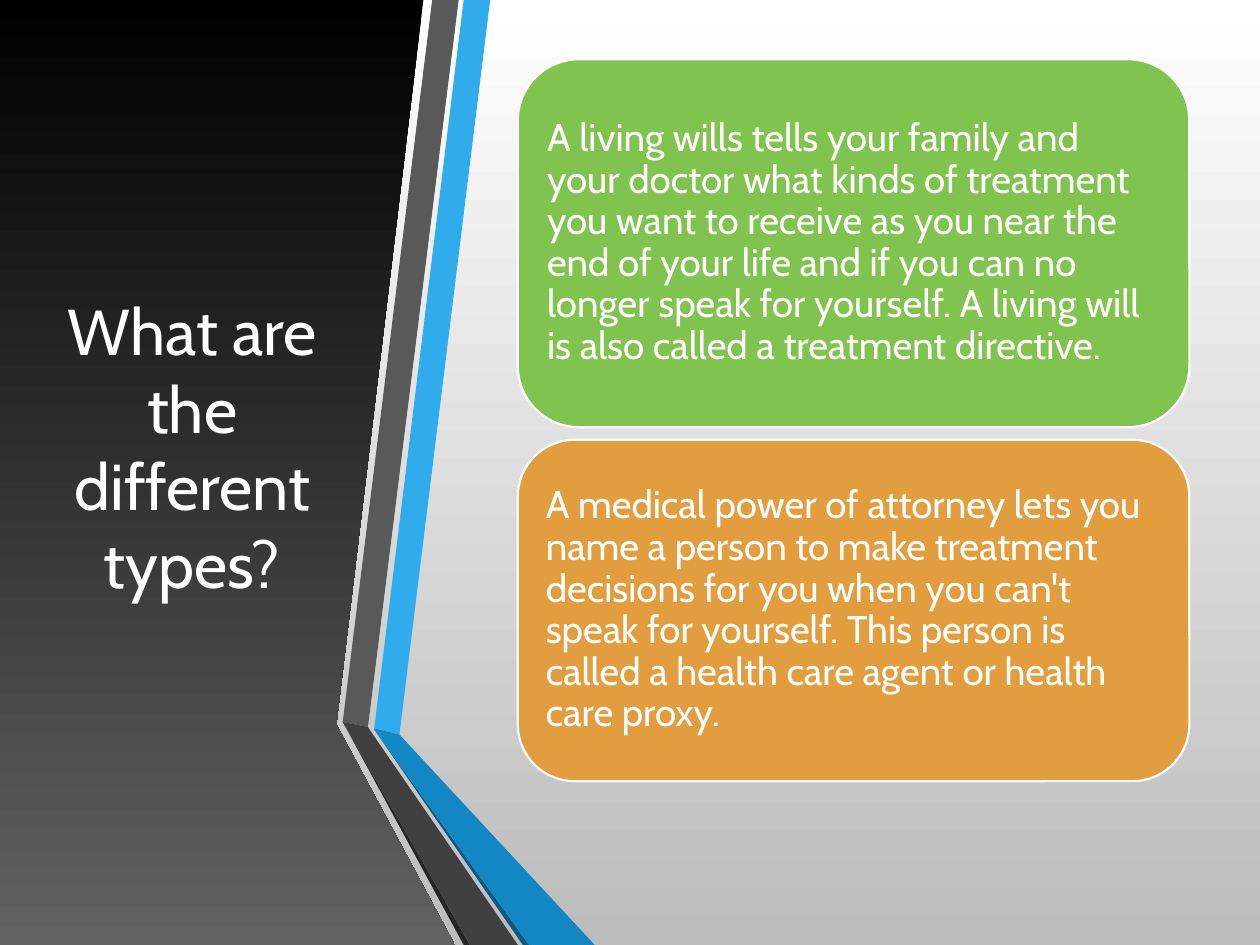
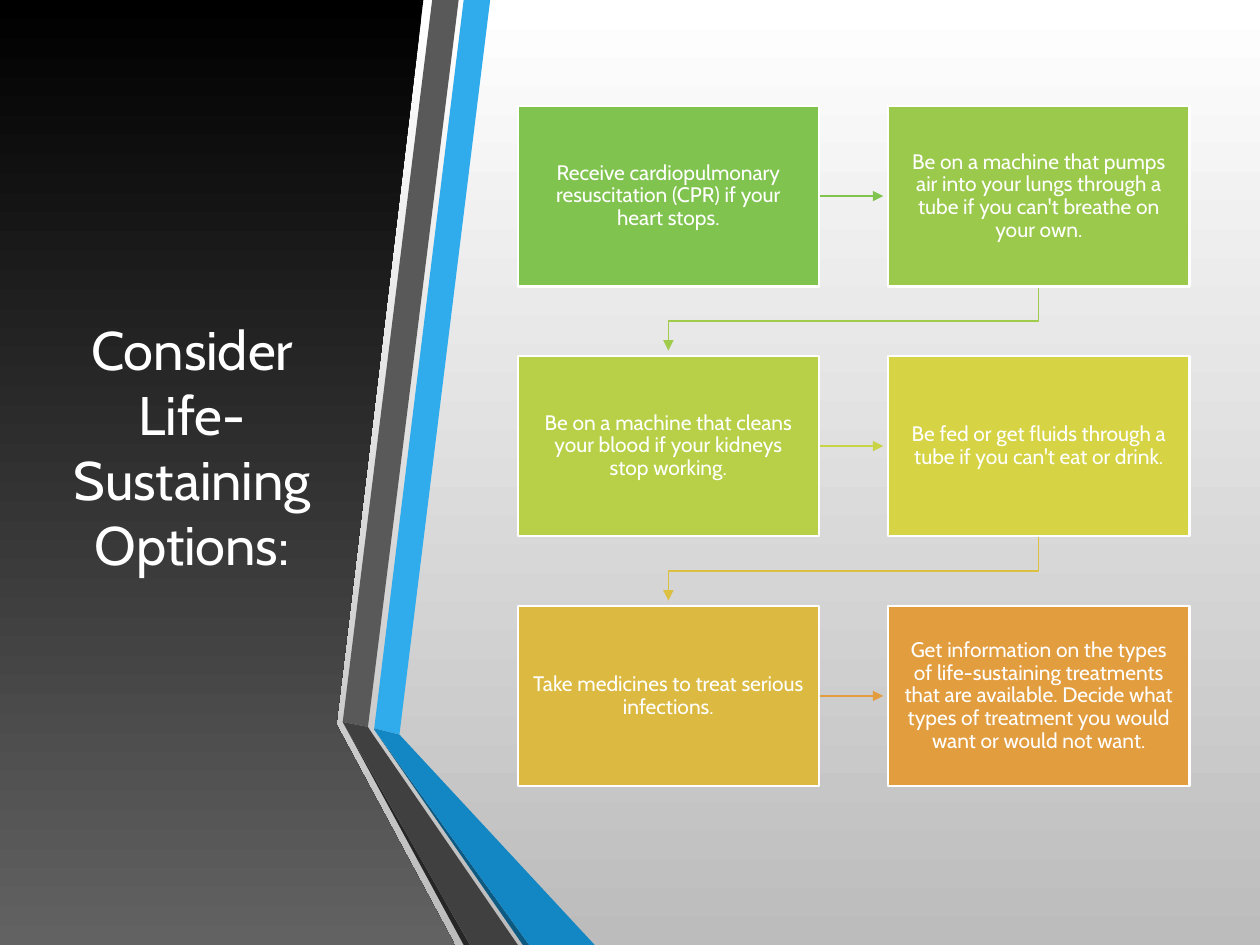
from itertools import pairwise

from lxml import etree
from pptx import Presentation
from pptx.dml.color import RGBColor
from pptx.enum.shapes import MSO_CONNECTOR, MSO_SHAPE
from pptx.enum.text import MSO_ANCHOR, MSO_AUTO_SIZE, PP_ALIGN
from pptx.oxml.ns import qn
from pptx.util import Inches, Pt

RECTANGLE = MSO_SHAPE.RECTANGLE
ROUNDED = MSO_SHAPE.ROUNDED_RECTANGLE
STRAIGHT = MSO_CONNECTOR.STRAIGHT
MIDDLE = MSO_ANCHOR.MIDDLE
NO_AUTOFIT = MSO_AUTO_SIZE.NONE
CENTER, LEFT = PP_ALIGN.CENTER, PP_ALIGN.LEFT

FONT = "Cabin"
COLORS = {
    "white": "FFFFFF", "silver": "BCBCBC", "black": "000000", "gray": "626262",
    "blue": "30ACEC", "blue fold": "1287C3", "blue edge": "0C5A82",
    "slate": "595959", "slate fold": "404040", "slate edge": "262626",
    "green": "80C34F", "leaf": "9AC94B", "lime": "B8D048",
    "yellow": "D6D344", "gold": "DCBA41", "orange": "E29D3E",
    "leaf arrow": "A1CB4A", "lime arrow": "C8D346", "gold arrow": "DBC042",
}

TYPES_TITLE = "What are the different types?"
TYPES = [  # color, top, height, text
    ("green", 0.47, 2.92,
     "A living wills tells your family and your doctor what kinds of treatment "
     "you want to receive as you near the end of your life and if you can no "
     "longer speak for yourself. A living will is also called a treatment directive."),
    ("orange", 3.49, 2.71,
     "A medical power of attorney lets you name a person to make treatment "
     "decisions for you when you can't speak for yourself. This person is called "
     "a health care agent or health care proxy."),
]

OPTIONS_TITLE = "Consider Life- Sustaining Options:"
OPTIONS = [
    ("green", "Receive cardiopulmonary resuscitation (CPR) if your heart stops."),
    ("leaf", "Be on a machine that pumps air into your lungs through a tube "
             "if you can't breathe on your own."),
    ("lime", "Be on a machine that cleans your blood if your kidneys stop working."),
    ("yellow", "Be fed or get fluids through a tube if you can't eat or drink."),
    ("gold", "Take medicines to treat serious infections."),
    ("orange", "Get information on the types of life-sustaining treatments that are "
               "available. Decide what types of treatment you would want or would not want."),
]
ARROW_COLORS = ["green", "leaf arrow", "lime arrow", "gold arrow", "orange"]

# Content area and option grid, in inches
AREA_LEFT, AREA_WIDTH = 4.11, 5.33
GRID_TOP, GRID_HEIGHT = 0.84, 5.4
COLUMNS, ROWS, GAP = 2, 3, 0.55
ARROW_CLEARANCE = 0.04
CELL_WIDTH = (AREA_WIDTH - GAP * (COLUMNS - 1)) / COLUMNS
CELL_HEIGHT = (GRID_HEIGHT - GAP * (ROWS - 1)) / ROWS

PANEL = [(0, 0), (3.36, 0), (2.67, 5.75), (3.61, 7.5), (0, 7.5)]
BANDS = [
    ("blue", [(2.97, 5.78), (3.17, 5.83), (3.89, 0), (3.68, 0)]),
    ("slate", [(3.64, 0), (3.43, 0), (2.72, 5.73), (2.92, 5.77)]),
    ("slate edge", [(2.72, 5.73), (3.68, 7.5), (3.73, 7.5)]),
    ("blue edge", [(2.97, 5.79), (4.15, 7.5), (4.2, 7.5)]),
    ("blue fold", [(2.97, 5.78), (2.97, 5.79), (4.2, 7.5), (4.72, 7.5), (3.17, 5.83)]),
    ("slate fold", [(2.72, 5.73), (3.73, 7.5), (4.11, 7.5), (2.96, 5.83), (2.92, 5.77)]),
]


def rgb(name):
    return RGBColor.from_string(COLORS[name])


def fill_downward(fill, top, bottom):
    """Give the fill a vertical gradient."""
    fill.gradient()
    fill.gradient_angle = 270
    for stop, name in zip(fill.gradient_stops, (top, bottom)):
        stop.color.rgb = rgb(name)


def add_outline(slide, points, closed=True):
    start, *others = [(Inches(x), Inches(y)) for x, y in points]
    builder = slide.shapes.build_freeform(*start)
    builder.add_line_segments(others, close=closed)
    shape = builder.convert_to_shape()
    shape.shadow.inherit = False
    if closed:
        shape.line.fill.background()
    else:
        shape.fill.background()
    return shape


def write(shape, text, size, alignment, inset, line_spacing=1.0):
    frame = shape.text_frame
    frame.text = text
    frame.word_wrap = True
    frame.auto_size = NO_AUTOFIT
    frame.vertical_anchor = MIDDLE
    frame.margin_left = frame.margin_right = Inches(inset)
    frame.margin_top = frame.margin_bottom = Inches(inset)
    paragraph = frame.paragraphs[0]
    paragraph.alignment = alignment
    paragraph.line_spacing = line_spacing
    paragraph.font.name = FONT
    paragraph.font.size = Pt(size)
    paragraph.font.color.rgb = rgb("white")


def add_card(slide, kind, box, color):
    card = slide.shapes.add_shape(kind, *map(Inches, box))
    card.shadow.inherit = False
    card.fill.solid()
    card.fill.fore_color.rgb = rgb(color)
    card.line.color.rgb = rgb("white")
    card.line.width = Pt(1.25)
    return card


def add_titled_slide(presentation, title_text, title_size):
    slide = presentation.slides.add_slide(presentation.slide_layouts[5])
    fill_downward(add_outline(slide, PANEL).fill, "black", "gray")
    for color, points in BANDS:
        band = add_outline(slide, points)
        band.fill.solid()
        band.fill.fore_color.rgb = rgb(color)
    title = slide.shapes.title
    title.left, title.top = Inches(0.44), Inches(0.75)
    title.width, title.height = Inches(2.17), Inches(5.58)
    write(title, title_text, title_size, CENTER, 0.05)
    slide.shapes.element.append(title.element)  # in front of the panel
    return slide


def add_arrow(slide, source, target, color):
    """Join two (left, top) cells: straight along a row, bent to the next row."""
    (left, top), (next_left, next_top) = source, target
    if top == next_top:
        y = top + CELL_HEIGHT / 2
        ends = (left + CELL_WIDTH, y, next_left - ARROW_CLEARANCE, y)
        arrow = slide.shapes.add_connector(STRAIGHT, *map(Inches, ends))
    else:
        start_x, end_x = left + CELL_WIDTH / 2, next_left + CELL_WIDTH / 2
        bottom = top + CELL_HEIGHT
        bend = (bottom + next_top) / 2
        arrow = add_outline(slide, [(start_x, bottom), (start_x, bend), (end_x, bend),
                                    (end_x, next_top - ARROW_CLEARANCE)], closed=False)
    arrow.line.color.rgb = rgb(color)
    arrow.line.width = Pt(0.75)
    properties = arrow.element.spPr
    etree.SubElement(properties.find(qn("a:ln")), qn("a:tailEnd"), type="triangle")
    if properties.find(qn("a:effectLst")) is None:
        etree.SubElement(properties, qn("a:effectLst"))


def build_types(presentation):
    slide = add_titled_slide(presentation, TYPES_TITLE, 37)
    for color, top, height, text in TYPES:
        card = add_card(slide, ROUNDED, (AREA_LEFT, top, AREA_WIDTH, height), color)
        write(card, text, 22, LEFT, 0.09, 0.9)


def build_options(presentation):
    slide = add_titled_slide(presentation, OPTIONS_TITLE, 31)
    cells = [(AREA_LEFT + column * (CELL_WIDTH + GAP), GRID_TOP + row * (CELL_HEIGHT + GAP))
             for row in range(ROWS) for column in range(COLUMNS)]
    for (source, target), color in zip(pairwise(cells), ARROW_COLORS):
        add_arrow(slide, source, target, color)
    for cell, (color, text) in zip(cells, OPTIONS):
        card = add_card(slide, RECTANGLE, (*cell, CELL_WIDTH, CELL_HEIGHT), color)
        write(card, text, 12, CENTER, 0.12, 0.9)


def main():
    presentation = Presentation()
    presentation.slide_width, presentation.slide_height = Inches(10), Inches(7.5)
    fill_downward(presentation.slide_master.background.fill, "white", "silver")
    build_types(presentation)
    build_options(presentation)
    presentation.save("out.pptx")


if __name__ == "__main__":
    main()
